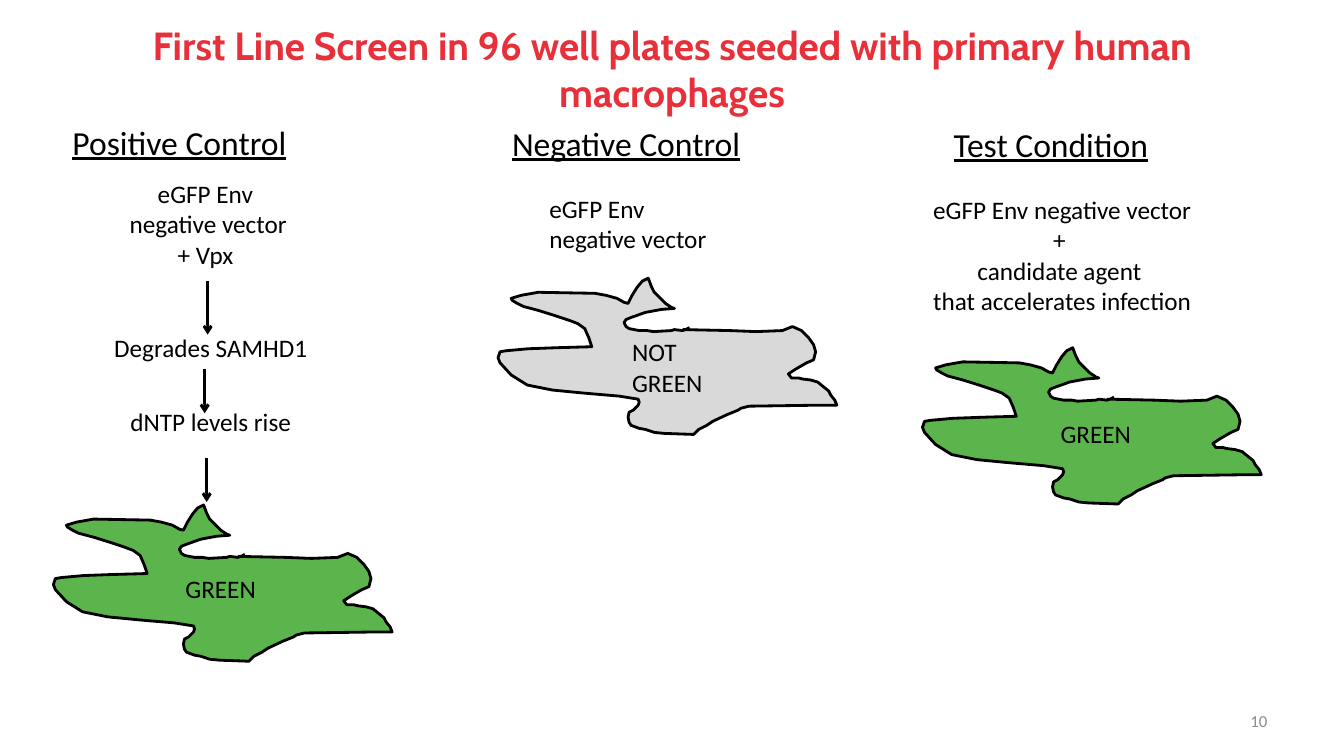
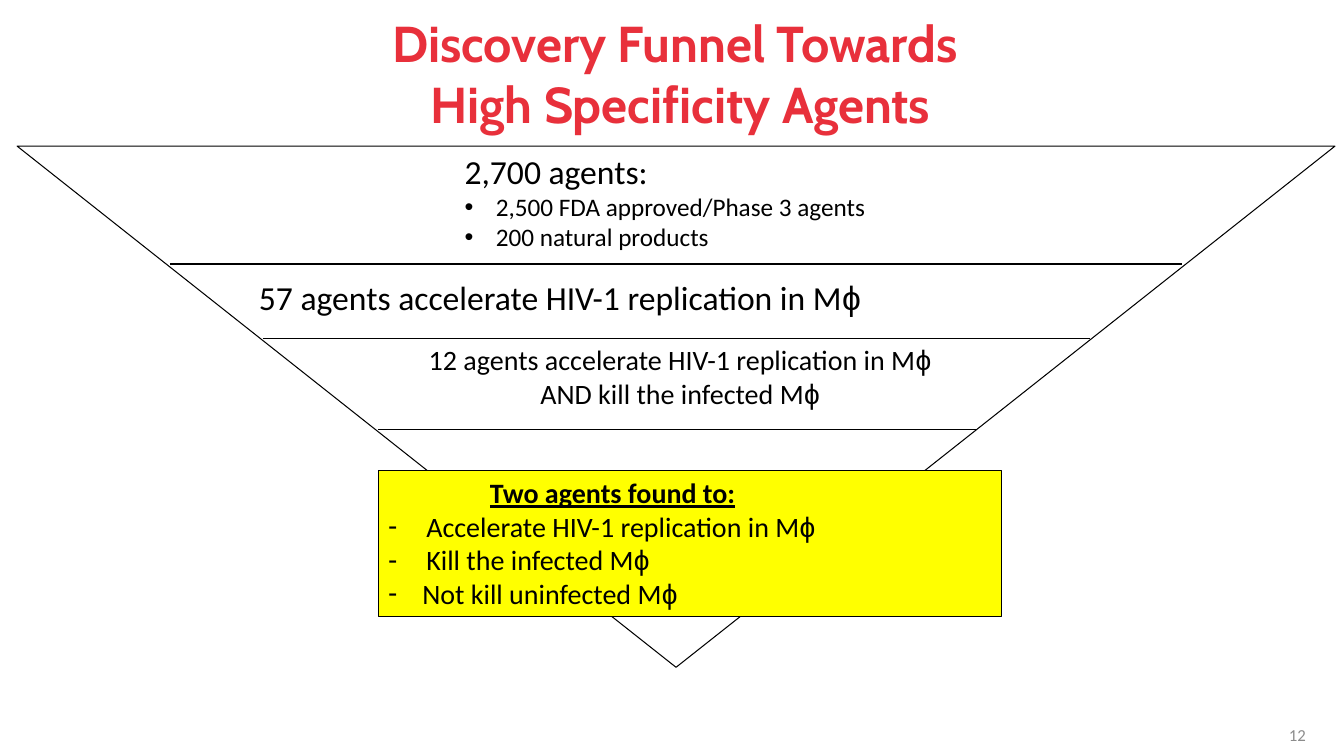
from dataclasses import dataclass

from lxml import etree
from pptx import Presentation
from pptx.dml.color import RGBColor
from pptx.enum.shapes import MSO_CONNECTOR, MSO_SHAPE
from pptx.enum.text import MSO_ANCHOR, MSO_AUTO_SIZE, PP_ALIGN
from pptx.oxml.ns import qn
from pptx.util import Pt

LEFT, CENTER, RIGHT = PP_ALIGN.LEFT, PP_ALIGN.CENTER, PP_ALIGN.RIGHT
TOP, MIDDLE = MSO_ANCHOR.TOP, MSO_ANCHOR.MIDDLE
FIT_SHAPE, NO_FIT = MSO_AUTO_SIZE.SHAPE_TO_FIT_TEXT, MSO_AUTO_SIZE.NONE
STRAIGHT = MSO_CONNECTOR.STRAIGHT
RECTANGLE, TRIANGLE = MSO_SHAPE.RECTANGLE, MSO_SHAPE.ISOSCELES_TRIANGLE
TITLE_ONLY = 5
EMU_PER_PX = 9144
PHI = "ϕ"

CELL_OUTLINE = [
    (183, 51), (230, 52), (256, 53), (282, 52), (292, 48), (301, 52), (308, 59),
    (313, 66), (315, 73), (313, 81), (306, 84), (299, 88), (294, 91), (288, 95),
    (291, 99), (298, 99), (302, 100), (310, 101), (317, 103), (328, 112),
    (330, 116), (334, 121), (336, 126), (318, 126), (249, 127), (241, 129),
    (238, 131), (233, 133), (228, 135), (213, 142), (207, 146), (199, 150),
    (194, 155), (165, 154), (155, 153), (146, 150), (140, 149), (132, 146),
    (130, 143), (129, 138), (130, 133), (134, 131), (139, 126), (140, 123),
    (139, 120), (120, 117), (85, 114), (54, 111), (29, 106), (13, 96), (2, 84),
    (0, 79), (2, 73), (8, 72), (30, 70), (58, 69), (93, 68), (90, 59), (86, 50),
    (79, 45), (71, 42), (56, 37), (40, 32), (25, 28), (19, 25), (14, 22),
    (13, 20), (23, 17), (40, 14), (96, 15), (107, 17), (118, 20), (125, 24),
    (129, 25), (133, 17), (138, 9), (143, 3), (149, 0), (152, 8), (155, 14),
    (166, 25), (169, 27), (172, 29), (175, 30), (162, 31), (146, 34), (132, 39),
    (127, 41), (125, 44), (127, 48), (130, 50), (140, 52), (148, 52), (154, 53),
    (172, 52), (175, 51), (183, 52), (186, 51), (190, 49),
]


@dataclass(frozen=True)
class Theme:
    title_font: str = "Cabin"
    body_font: str = "Calibri"
    symbol_font: str = "Arial"
    red: str = "E8303B"
    black: str = "000000"
    gray: str = "8C8C8C"
    pale: str = "D9D9D9"
    green: str = "5CB44C"
    yellow: str = "FFFF00"
    large_title: int = 36
    small_title: int = 28
    heading: int = 24
    medium: int = 20
    body: int = 18
    number: int = 12
    thick: float = 2
    thin: float = 1
    hairline: float = 0.75


THEME = Theme()


@dataclass
class Para:
    text: str
    size: int = THEME.body
    color: str = THEME.black
    font: str = THEME.body_font
    align: PP_ALIGN = LEFT
    bold: bool = False
    underline: bool = False
    bullet: str = ""
    indent: int = 0
    before: int = 0


def px(length):
    return length * EMU_PER_PX


def rgb(color):
    return RGBColor.from_string(color)


class Page:
    def __init__(self, deck, theme):
        self.theme = theme
        self.slide = deck.slides.add_slide(deck.slide_layouts[TITLE_ONLY])
        self.shapes = self.slide.shapes

    def title(self, text, size, left, top, width, height):
        box = self.shapes.title
        box.left, box.top, box.width, box.height = map(px, (left, top, width, height))
        para = Para(text, size, self.theme.red, self.theme.title_font, CENTER, bold=True)
        self.fill_text(box, [para], anchor=MIDDLE, fit=NO_FIT)

    def number(self, text, left, top):
        para = Para(text, self.theme.number, self.theme.gray, align=RIGHT)
        self.text([para], left, top, 311, 40, wrap=True, anchor=MIDDLE, fit=NO_FIT)

    def text(self, paras, left, top, width, height, wrap=False, anchor=TOP, fit=FIT_SHAPE):
        box = self.shapes.add_textbox(*map(px, (left, top, width, height)))
        self.fill_text(box, paras, wrap, anchor, fit)

    def shape(self, kind, left, top, width, height, fill=None, rotation=0):
        shape = self.shapes.add_shape(kind, *map(px, (left, top, width, height)))
        shape.rotation = rotation
        self.paint(shape, fill, self.theme.hairline)
        return shape

    def cell(self, left, top, fill):
        points = [(left + x, top + y) for x, y in CELL_OUTLINE]
        builder = self.shapes.build_freeform(*points[0], scale=EMU_PER_PX)
        builder.add_line_segments(points[1:], close=False)
        self.paint(builder.convert_to_shape(), fill, self.theme.thick)

    def line(self, start, end, weight, arrow=False):
        line = self.shapes.add_connector(STRAIGHT, *map(px, (*start, *end)))
        line.line.color.rgb = rgb(self.theme.black)
        line.line.width = Pt(weight)
        properties = line._element.spPr
        if arrow:
            outline = properties.find(qn("a:ln"))
            etree.SubElement(outline, qn("a:tailEnd"), type="arrow")
        etree.SubElement(properties, qn("a:effectLst"))

    def paint(self, shape, fill, weight):
        shape.shadow.inherit = False
        if fill:
            shape.fill.solid()
            shape.fill.fore_color.rgb = rgb(fill)
        else:
            shape.fill.background()
        shape.line.color.rgb = rgb(self.theme.black)
        shape.line.width = Pt(weight)

    def fill_text(self, box, paras, wrap=True, anchor=TOP, fit=FIT_SHAPE):
        frame = box.text_frame
        frame.word_wrap = wrap
        frame.auto_size = fit
        frame.vertical_anchor = anchor
        for index, para in enumerate(paras):
            target = frame.add_paragraph() if index else frame.paragraphs[0]
            target.alignment = para.align
            if para.before:
                target.space_before = Pt(para.before)
            self.indent(target, para)
            for row, text in enumerate(para.text.split("\n")):
                if row:
                    target.add_line_break()
                words, symbol, _ = text.partition(PHI)
                self.span(target, para, words, para.font)
                if symbol:
                    self.span(target, para, symbol, self.theme.symbol_font)

    def indent(self, target, para):
        if not para.indent:
            return
        properties = target._p.get_or_add_pPr()
        properties.set("marL", str(px(para.indent)))
        if para.bullet:
            properties.set("indent", str(-px(para.indent)))
            etree.SubElement(properties, qn("a:buFont"), typeface=self.theme.symbol_font)
            etree.SubElement(properties, qn("a:buChar"), char=para.bullet)

    def span(self, target, para, text, font):
        span = target.add_run()
        span.text = text
        span.font.name = font
        span.font.size = Pt(para.size)
        span.font.bold = para.bold
        span.font.underline = para.underline
        span.font.color.rgb = rgb(para.color)


def screen_page(deck):
    page = Page(deck, THEME)
    page.title("First Line Screen in 96 well plates seeded with primary human macrophages",
               THEME.small_title, 82, 5, 1169, 125)
    page.number("10", 956, 695)

    columns = [
        ("Positive Control", (62, 116, 236, 50),
         ["eGFP Env ", "negative vector", "+ Vpx "], CENTER, (117, 172, 179, 101),
         (53, 501), THEME.green, ["GREEN"], (174, 564, 91, 40)),
        ("Negative Control", (498, 117, 251, 50),
         ["eGFP Env", "negative vector"], LEFT, (535, 187, 179, 71),
         (494, 276), THEME.pale, ["NOT", "GREEN"], (617, 329, 91, 71)),
        ("Test Condition", (936, 118, 218, 50),
         ["eGFP Env negative vector", "+ ", "candidate agent ", "that accelerates infection "],
         CENTER, (913, 188, 281, 131),
         (915, 345), THEME.green, ["GREEN"], (1042, 410, 91, 40)),
    ]
    for heading, heading_box, agents, align, agents_box, cell, fill, label, label_box in columns:
        page.text([Para(heading, THEME.heading, underline=True)], *heading_box)
        page.text([Para(agent, align=align) for agent in agents], *agents_box)
        page.cell(*cell, fill)
        page.text([Para(word) for word in label], *label_box)

    page.text([Para("Degrades SAMHD1", align=CENTER),
               Para("dNTP levels rise", align=CENTER, before=31)], 102, 325, 214, 114)
    for x, top, bottom in [(206, 279, 332), (203, 366, 410), (205, 454, 498)]:
        page.line((x, top), (x, bottom), THEME.thick, arrow=True)


def funnel_page(deck):
    page = Page(deck, THEME)
    page.title("Discovery Funnel Towards \nHigh Specificity Agents",
               THEME.large_title, 75, 10, 1200, 125)
    page.number("12", 994, 709)
    page.shape(TRIANGLE, 17, 145, 1307, 517, rotation=180)
    for left, right, y in [(169, 1172, 262), (261, 1081, 336), (375, 968, 426)]:
        page.line((left, y), (right, y), THEME.thin)

    page.text([Para("2,700 agents:", THEME.heading),
               Para("2,500 FDA approved/Phase 3 agents", bullet="•", indent=31),
               Para("200 natural products", bullet="•", indent=31)], 451, 145, 423, 111)
    page.text([Para("57 agents accelerate HIV-1 replication in Mϕ", THEME.heading)],
              247, 270, 628, 50)
    page.text([Para("12 agents accelerate HIV-1 replication in Mϕ", THEME.medium, align=CENTER),
               Para("AND kill the infected Mϕ", THEME.medium, align=CENTER)],
              238, 335, 873, 77, wrap=True)

    findings = [("Accelerate HIV-1 replication in Mϕ", 38),
                ("Kill the infected Mϕ", 38),
                ("Not kill uninfected Mϕ", 34)]
    box = page.shape(RECTANGLE, 375, 467, 618, 145, THEME.yellow)
    page.fill_text(box, [Para("Two agents found to:", THEME.medium, bold=True,
                              underline=True, indent=101)]
                   + [Para(text, THEME.medium, bullet="-", indent=indent)
                      for text, indent in findings])


def main():
    deck = Presentation()
    deck.slide_width, deck.slide_height = px(1333), px(750)
    screen_page(deck)
    funnel_page(deck)
    deck.save("out.pptx")


if __name__ == "__main__":
    main()
